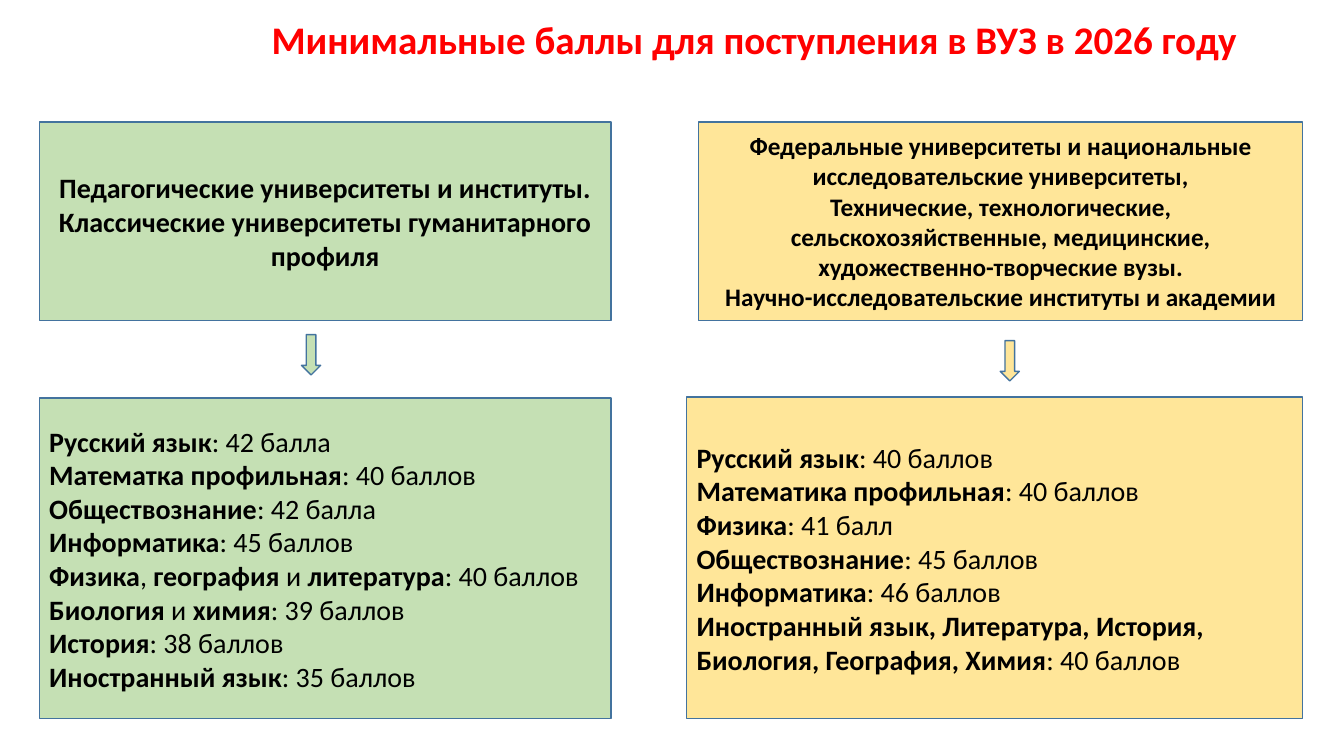
from pptx import Presentation
from pptx.dml.color import RGBColor
from pptx.enum.shapes import MSO_SHAPE
from pptx.enum.text import MSO_ANCHOR, PP_ALIGN
from pptx.util import Inches, Pt

GREEN, YELLOW, OUTLINE = "C5E0B4", "FFE699", "43739E"

TEACHING_HEADING = [
    "*Педагогические университеты и институты.*",
    "*Классические университеты гуманитарного профиля*",
]
TEACHING_SCORES = [
    "*Русский язык*: 42 балла",
    "*Математка профильная*: 40 баллов",
    "*Обществознание*: 42 балла",
    "*Информатика*: 45 баллов",
    "*Физика*, *география* и *литература*: 40 баллов",
    "*Биология* и *химия*: 39 баллов",
    "*История*: 38 баллов",
    "*Иностранный язык*: 35 баллов",
]
FEDERAL_HEADING = [
    "*Федеральные университеты и национальные исследовательские университеты,*",
    "*Технические, технологические, сельскохозяйственные, медицинские, "
    "художественно-творческие вузы.*",
    "*Научно-исследовательские институты и академии*",
]
FEDERAL_SCORES = [
    "*Русский язык*: 40 баллов",
    "*Математика профильная*: 40 баллов",
    "*Физика*: 41 балл",
    "*Обществознание*: 45 баллов",
    "*Информатика*: 46 баллов",
    "*Иностранный язык, Литература, История, Биология, География, Химия*: 40 баллов",
]


def color(value):
    """Turn a hex string into a colour."""
    return RGBColor.from_string(value)


def write(frame, lines, size=20, ink="000000", align=PP_ALIGN.LEFT, spacing=1.0):
    """Fill a text frame with lines in which asterisks enclose bold words."""
    frame.word_wrap = True
    frame.vertical_anchor = MSO_ANCHOR.MIDDLE
    for index, line in enumerate(lines):
        paragraph = frame.paragraphs[0] if index == 0 else frame.add_paragraph()
        paragraph.alignment = align
        paragraph.line_spacing = spacing
        for position, words in enumerate(line.split("*")):
            if words:
                run = paragraph.add_run()
                run.text = words
                run.font.name = "Calibri"
                run.font.size = Pt(size)
                run.font.bold = position % 2 == 1
                run.font.color.rgb = color(ink)


def add_panel(slide, box, fill, kind=MSO_SHAPE.RECTANGLE):
    """Draw an outlined shape in the box and return its text frame."""
    panel = slide.shapes.add_shape(kind, *map(Inches, box))
    panel.shadow.inherit = False
    panel.fill.solid()
    panel.fill.fore_color.rgb = color(fill)
    panel.line.color.rgb = color(OUTLINE)
    panel.line.width = Pt(1)
    return panel.text_frame


def add_title(slide, box, text):
    """Place the slide title in the box."""
    title = slide.shapes.title
    title.left, title.top, title.width, title.height = map(Inches, box)
    write(title.text_frame, [f"*{text}*"], size=27.9, ink="FF0000",
          align=PP_ALIGN.CENTER, spacing=0.7)


def add_column(slide, box, fill, heading, scores, heading_size, heading_inset,
               scores_height, arrow_offset):
    """Stack a heading, an arrow and the minimum scores in the box."""
    left, top, width, height = box
    heading_box = (left + heading_inset, top, width - heading_inset, 1.97)
    write(add_panel(slide, heading_box, fill), heading, size=heading_size,
          align=PP_ALIGN.CENTER)
    scores_box = (left, top + height - scores_height, width, scores_height)
    write(add_panel(slide, scores_box, fill), scores)
    arrow_left, arrow_top = arrow_offset
    add_panel(slide, (left + arrow_left, top + arrow_top, 0.19, 0.4), fill,
              MSO_SHAPE.DOWN_ARROW)


def main():
    """Build and save the slide about minimum scores."""
    deck = Presentation()
    deck.slide_width, deck.slide_height = Inches(13.33), Inches(7.5)
    slide = deck.slides.add_slide(deck.slide_layouts[5])
    add_title(slide, (2.54, 0.16, 9.88, 0.57),
              "Минимальные баллы для поступления в ВУЗ в 2026 году")
    add_column(slide, (0.39, 1.21, 5.67, 5.92), GREEN, TEACHING_HEADING,
               TEACHING_SCORES, heading_size=20, heading_inset=0,
               scores_height=3.18, arrow_offset=(2.6, 2.11))
    add_column(slide, (6.81, 1.21, 6.11, 5.92), YELLOW, FEDERAL_HEADING,
               FEDERAL_SCORES, heading_size=18, heading_inset=0.12,
               scores_height=3.19, arrow_offset=(3.11, 2.17))
    deck.save("out.pptx")


if __name__ == "__main__":
    main()
